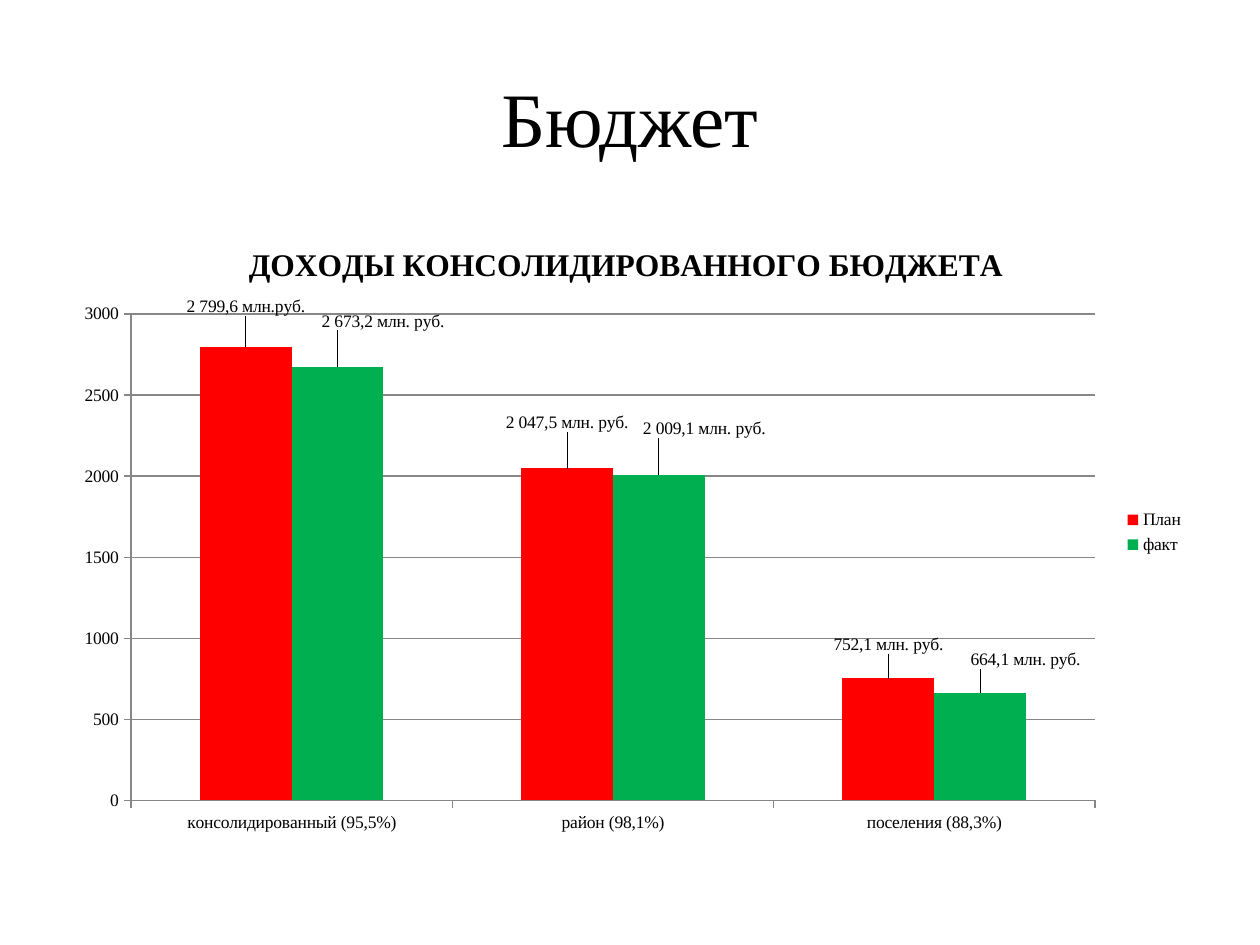
from lxml import etree
from pptx import Presentation
from pptx.chart.data import CategoryChartData
from pptx.dml.color import RGBColor
from pptx.enum import chart as ch, text as tx
from pptx.oxml import ns
from pptx.util import Inches, Pt


def rgb(code):
    return RGBColor.from_string(code)


class Deck:
    face = "Times New Roman"
    ink = "000000"
    grey = "878787"

    def __init__(self, show):
        self.slide = show.slides.add_slide(show.slide_layouts[6])

    def style(self, font, size, bold=False):
        font.name, font.size, font.bold = self.face, Pt(size), bold
        font.color.rgb = rgb(self.ink)

    def title(self, words, box):
        frame = self.slide.shapes.add_textbox(*map(Inches, box)).text_frame
        frame.word_wrap = True
        frame.vertical_anchor = tx.MSO_ANCHOR.MIDDLE
        para = frame.paragraphs[0]
        para.text = words
        para.alignment = tx.PP_ALIGN.CENTER
        self.style(para.runs[0].font, 44)

    def place(self, parent, index, **spots):
        """Put a manual layout into a chart part."""
        for old in parent.findall(ns.qn("c:layout")):
            parent.remove(old)
        layout = etree.Element(ns.qn("c:layout"))
        manual = etree.SubElement(layout, ns.qn("c:manualLayout"))
        for key, val in spots.items():
            etree.SubElement(manual, ns.qn("c:" + key)).set("val", str(val))
        parent.insert(index, layout)

    def line(self, form):
        form.line.color.rgb = rgb(self.grey)
        form.line.width = Pt(0.75)

    def chart(self, head, cats, rows, box):
        data = CategoryChartData()
        data.categories = cats
        for name, _, _, vals, _ in rows:
            data.add_series(name, vals)
        chart = self.slide.shapes.add_chart(
            ch.XL_CHART_TYPE.COLUMN_CLUSTERED, *map(Inches, box), data).chart
        self.style(chart.font, 10)

        # Heading and legend
        chart.has_title = True
        frame = chart.chart_title.text_frame
        frame.text = head
        self.style(frame.paragraphs[0].runs[0].font, 18, True)
        chart.chart_title.include_in_layout = False
        chart.has_legend = True
        chart.legend.position = ch.XL_LEGEND_POSITION.RIGHT
        chart.legend.include_in_layout = False

        # Axes
        for axis in (chart.category_axis, chart.value_axis):
            axis.major_tick_mark = ch.XL_TICK_MARK.OUTSIDE
            self.line(axis.format)
        scale = chart.value_axis
        scale.minimum_scale, scale.maximum_scale = 0, 3000
        scale.major_unit = 500
        scale.has_major_gridlines = True
        self.line(scale.major_gridlines.format)

        # Bars and their labels
        plot = chart.plots[0]
        plot.gap_width, plot.overlap = 150, 0
        plot.vary_by_categories = False
        for bars, (_, fill, shift, _, notes) in zip(plot.series, rows):
            bars.format.fill.solid()
            bars.format.fill.fore_color.rgb = rgb(fill)
            for i, (note, rise) in enumerate(notes):
                label = bars.points[i].data_label
                label.text_frame.text = note
                self.style(label.text_frame.paragraphs[0].runs[0].font, 10)
                label.position = ch.XL_LABEL_POSITION.OUTSIDE_END
            marks = bars.data_labels
            marks.show_value = True
            self.style(marks.font, 10)
            for mark, (_, rise) in zip(
                    bars._element.findall(".//" + ns.qn("c:dLbl")), notes):
                self.place(mark, 1, x=shift, y=-rise)

        area = chart._chartSpace.find(".//" + ns.qn("c:plotArea"))
        self.place(area, 0, layoutTarget="inner", xMode="edge", yMode="edge",
                   x=0.06, y=0.15, w=0.85, h=0.78)


def main():
    show = Presentation()
    show.slide_width, show.slide_height = Inches(10), Inches(7.5)
    deck = Deck(show)
    deck.title("Бюджет", (0.5, 0.3, 9, 1.25))
    # Each row: name, fill, label shift, values, labels with their rise
    deck.chart(
        "ДОХОДЫ КОНСОЛИДИРОВАННОГО БЮДЖЕТА ",
        ["консолидированный (95,5%)", "район (98,1%)", "поселения (88,3%)"],
        [("План", "FF0000", 0, (2799.6, 2047.5, 752.1),
          [("2 799,6 млн.руб.", 0.04), ("2 047,5 млн. руб.", 0.05),
           ("752,1 млн. руб.", 0.03)]),
         ("факт", "00B050", 0.04, (2673.2, 2009.1, 664.1),
          [("2 673,2 млн. руб.", 0.05), ("2 009,1 млн. руб.", 0.05),
           ("664,1 млн. руб.", 0.03)])],
        (0.5, 1.75, 9, 4.95))
    show.save("out.pptx")


if __name__ == "__main__":
    main()
